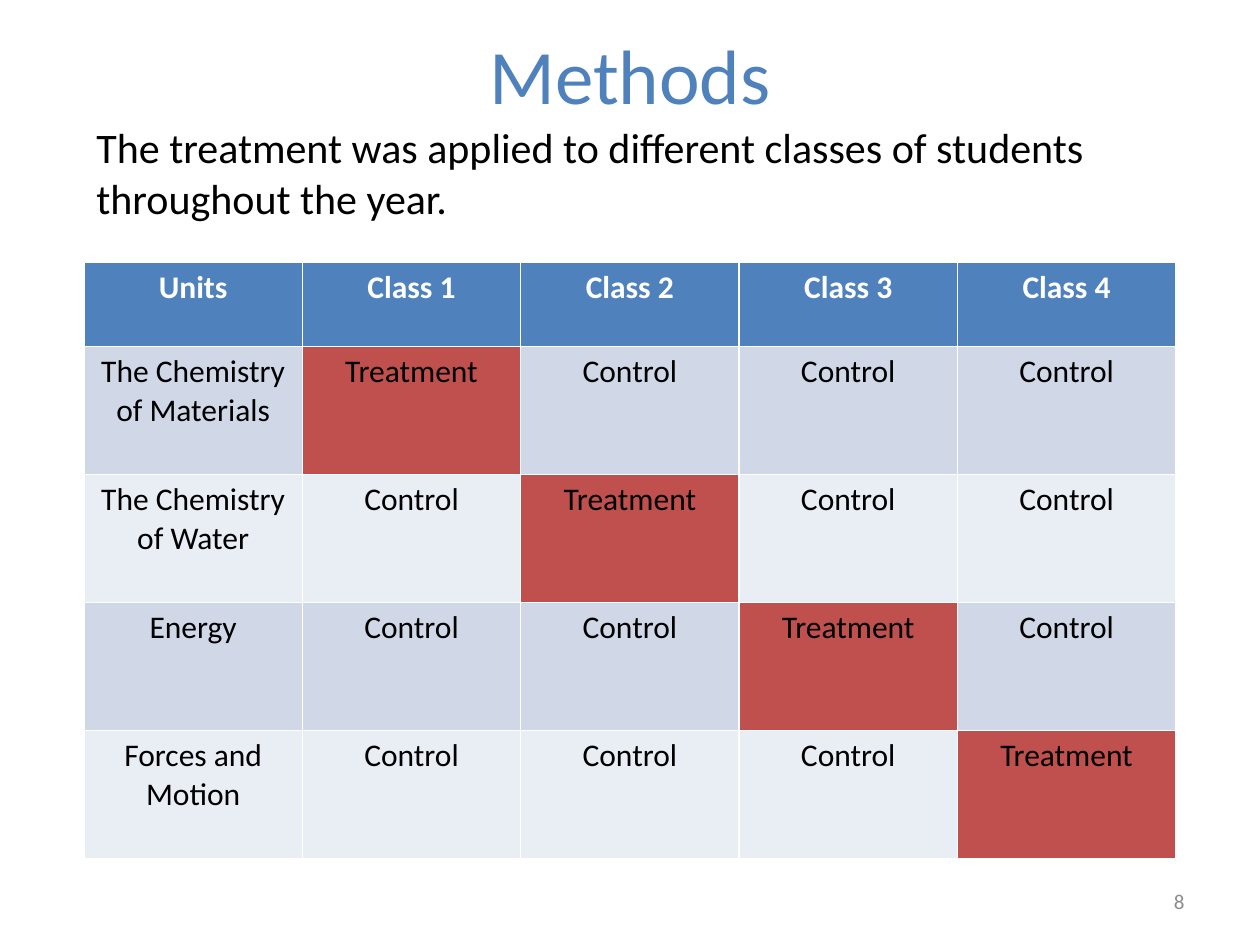
import pptx
import pptx.dml.color
import pptx.enum.text
import pptx.util

Pt = pptx.util.Pt
RGBColor = pptx.dml.color.RGBColor
ALIGN = pptx.enum.text.PP_ALIGN
MIDDLE = pptx.enum.text.MSO_ANCHOR.MIDDLE

BLUE = RGBColor(0x4F, 0x81, 0xBD)
RED = RGBColor(0xC0, 0x50, 0x4D)
BAND_DARK = RGBColor(0xD0, 0xD8, 0xE8)
BAND_LIGHT = RGBColor(0xE9, 0xED, 0xF4)
GRAY = RGBColor(0x8C, 0x8C, 0x8C)
BLACK = RGBColor(0, 0, 0)
WHITE = RGBColor(0xFF, 0xFF, 0xFF)

UNITS = ["The Chemistry of Materials", "The Chemistry of Water",
         "Energy", "Forces and Motion"]
CLASSES = 4


def write(frame, text, size, color, align, bold=False):
    frame.word_wrap = True
    para = frame.paragraphs[0]
    para.text = text
    para.alignment = align
    para.font.name = "Calibri"
    para.font.size = Pt(size)
    para.font.bold = bold
    para.font.color.rgb = color


deck = pptx.Presentation()
deck.slide_width, deck.slide_height = Pt(720), Pt(540)
page = deck.slides.add_slide(deck.slide_layouts[5])

# Title
title = page.shapes.title
title.left, title.top, title.width, title.height = Pt(36), Pt(-3), Pt(648), Pt(90)
title.text_frame.vertical_anchor = MIDDLE
write(title.text_frame, "Methods", 44, BLUE, ALIGN.CENTER)

# Page number
number = page.shapes.add_textbox(Pt(516), Pt(500.5), Pt(168), Pt(28.75))
number.text_frame.vertical_anchor = MIDDLE
write(number.text_frame, "8", 12, GRAY, ALIGN.RIGHT)

# Table: each unit is the treatment for one class, along the diagonal
table = page.shapes.add_table(len(UNITS) + 1, CLASSES + 1,
                              Pt(48), Pt(150), Pt(624), Pt(340.6)).table
for column in table.columns:
    column.width = Pt(124.8)
for index, row in enumerate(table.rows):
    row.height = Pt(73.15 if index else 48)

rows = [["Units"] + [f"Class {number}" for number in range(1, CLASSES + 1)]]
for index, unit in enumerate(UNITS):
    rows.append([unit] + ["Treatment" if index == column else "Control"
                          for column in range(CLASSES)])

for row_index, texts in enumerate(rows):
    header = row_index == 0
    band = BLUE if header else BAND_DARK if row_index % 2 else BAND_LIGHT
    for column_index, text in enumerate(texts):
        cell = table.cell(row_index, column_index)
        cell.fill.solid()
        cell.fill.fore_color.rgb = RED if text == "Treatment" else band
        write(cell.text_frame, text, 18, WHITE if header else BLACK,
              ALIGN.CENTER, bold=header)

# Introduction
intro = page.shapes.add_textbox(Pt(48), Pt(66), Pt(636), Pt(65.5))
write(intro.text_frame,
      "The treatment was applied to different classes of students throughout the year.",
      24, BLACK, ALIGN.LEFT)

deck.save("out.pptx")
